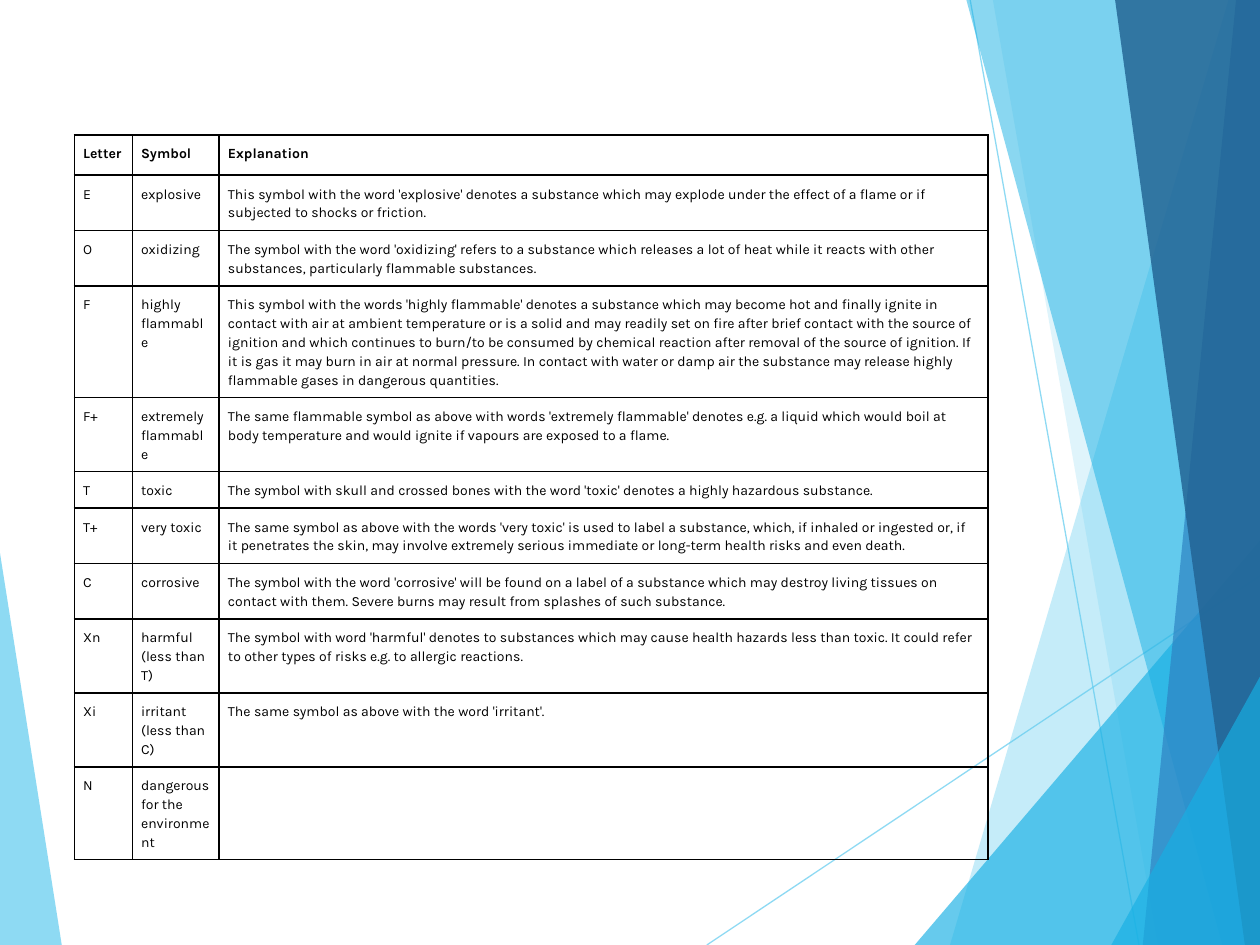
from lxml.etree import SubElement
from pptx import Presentation
from pptx.dml.color import RGBColor
from pptx.enum.shapes import MSO_CONNECTOR
from pptx.oxml.ns import qn
from pptx.util import Inches, Pt

FACETS_BELOW_LINES = [
    ("5FCBEF", 70, [(0, 4.39), (0.49, 7.5), (0, 7.5)]),
]
FACETS_ABOVE_LINES = [
    ("5FCBEF", 36, [(9.75, 0), (7.54, 7.5), (10, 7.5), (10, 0)]),
    ("5FCBEF", 20, [(7.88, 0), (9.19, 7.5), (10, 7.5), (10, 0)]),
    ("17B0E4", 66, [(7.26, 7.5), (10, 4.29), (10, 7.5)]),
    ("17B0E4", 50, [(7.67, 0), (9.7, 7.5), (10, 7.5), (10, 0)]),
    ("2E83C3", 70, [(9.81, 0), (9.07, 7.5), (10, 7.5), (10, 0)]),
    ("226292", 82, [(8.85, 0), (9.88, 7.5), (10, 7.5), (10, 0)]),
    ("17B0E4", 66, [(8.82, 7.5), (10, 5.37), (10, 7.5)]),
]
ACCENT_LINES = [((5.61, 7.5), (10, 4.57)), ((7.7, 0), (9.04, 7.5))]

COLUMN_WIDTHS = [0.46, 0.69, 6.1]
HAZARD_ROWS = [
    (0.32, "Letter", "Symbol", "Explanation"),
    (0.44, "E", "explosive",
     "This symbol with the word 'explosive' denotes a substance which may explode under the "
     "effect of a flame or if subjected to shocks or friction."),
    (0.44, "O", "oxidizing",
     "The symbol with the word 'oxidizing' refers to a substance which releases a lot of heat "
     "while it reacts with other substances, particularly flammable substances."),
    (0.88, "F", "highly flammable",
     "This symbol with the words 'highly flammable' denotes a substance which may become hot and "
     "finally ignite in contact with air at ambient temperature or is a solid and may readily set "
     "on fire after brief contact with the source of ignition and which continues to burn/to be "
     "consumed by chemical reaction after removal of the source of ignition. If it is gas it may "
     "burn in air at normal pressure. In contact with water or damp air the substance may release "
     "highly flammable gases in dangerous quantities."),
    (0.44, "F+", "extremely flammable",
     "The same flammable symbol as above with words 'extremely flammable' denotes e.g. a liquid "
     "which would boil at body temperature and would ignite if vapours are exposed to a flame."),
    (0.29, "T", "toxic",
     "The symbol with skull and crossed bones with the word 'toxic' denotes a highly hazardous "
     "substance."),
    (0.44, "T+", "very toxic",
     "The same symbol as above with the words 'very toxic' is used to label a substance, which, "
     "if inhaled or ingested or, if it penetrates the skin, may involve extremely serious "
     "immediate or long-term health risks and even death."),
    (0.44, "C", "corrosive",
     "The symbol with the word 'corrosive' will be found on a label of a substance which may "
     "destroy living tissues on contact with them. Severe burns may result from splashes of such "
     "substance."),
    (0.58, "Xn", "harmful (less than T)",
     "The symbol with word 'harmful' denotes to substances which may cause health hazards less "
     "than toxic. It could refer to other types of risks e.g. to allergic reactions."),
    (0.58, "Xi", "irritant (less than C)", "The same symbol as above with the word 'irritant'."),
    (0.73, "N", "dangerous for the environment", ""),
]


def color(value):
    return RGBColor.from_string(value)


def set_opacity(shape, percent):
    for fill_color in shape._element.spPr.iter(qn("a:srgbClr")):
        SubElement(fill_color, qn("a:alpha"), val=str(percent * 1000))


def add_facet(slide, left, top, fill, opacity, points):
    corners = [(Inches(left + x), Inches(top + y)) for x, y in points]
    builder = slide.shapes.build_freeform(*corners[0])
    builder.add_line_segments(corners[1:], close=True)
    shape = builder.convert_to_shape()
    shape.shadow.inherit = False
    shape.fill.solid()
    shape.fill.fore_color.rgb = color(fill)
    shape.line.fill.background()
    set_opacity(shape, opacity)


def add_accent_line(slide, left, top, start, end):
    ends = [Inches(offset + value) for point in (start, end)
            for offset, value in zip((left, top), point)]
    connector = slide.shapes.add_connector(MSO_CONNECTOR.STRAIGHT, *ends)
    connector.line.color.rgb = color("5FCBEF")
    connector.line.width = Pt(0.75)
    set_opacity(connector, 70)
    SubElement(connector._element.spPr, qn("a:effectLst"))


def add_backdrop(slide, left, top):
    for facet in FACETS_BELOW_LINES:
        add_facet(slide, left, top, *facet)
    for start, end in ACCENT_LINES:
        add_accent_line(slide, left, top, start, end)
    for facet in FACETS_ABOVE_LINES:
        add_facet(slide, left, top, *facet)


def add_borders(cell):
    properties = cell._tc.get_or_add_tcPr()
    for side in ("lnL", "lnR", "lnT", "lnB"):
        border = SubElement(properties, qn(f"a:{side}"), w=str(Pt(1)))
        SubElement(SubElement(border, qn("a:solidFill")), qn("a:srgbClr"), val="000000")


def fill_cell(cell, text, bold):
    add_borders(cell)
    cell.fill.background()
    cell.margin_left = cell.margin_right = Inches(0.07)
    cell.margin_top = cell.margin_bottom = Inches(0.07)
    paragraph = cell.text_frame.paragraphs[0]
    paragraph.line_spacing = 1.15
    paragraph.font.size = Pt(8)
    if text:
        run = paragraph.add_run()
        run.text = text
        run.font.name = "Karla"
        run.font.size = Pt(8)
        run.font.bold = bold
        run.font.color.rgb = color("000000")


def add_hazard_table(slide, left, top):
    width = sum(COLUMN_WIDTHS)
    height = sum(row[0] for row in HAZARD_ROWS)
    table = slide.shapes.add_table(
        len(HAZARD_ROWS), len(COLUMN_WIDTHS),
        Inches(left), Inches(top), Inches(width), Inches(height)).table
    table.first_row = False
    table.horz_banding = False
    for column, column_width in zip(table.columns, COLUMN_WIDTHS):
        column.width = Inches(column_width)
    for row_index, (row_height, *texts) in enumerate(HAZARD_ROWS):
        table.rows[row_index].height = Inches(row_height)
        for column_index, text in enumerate(texts):
            fill_cell(table.cell(row_index, column_index), text, row_index == 0)


def main():
    presentation = Presentation()
    presentation.slide_width = Inches(10)
    presentation.slide_height = Inches(7.5)
    slide = presentation.slides.add_slide(presentation.slide_layouts[6])
    add_backdrop(slide, 0, 0)
    add_hazard_table(slide, 0.59, 1.07)
    presentation.save("out.pptx")


if __name__ == "__main__":
    main()
